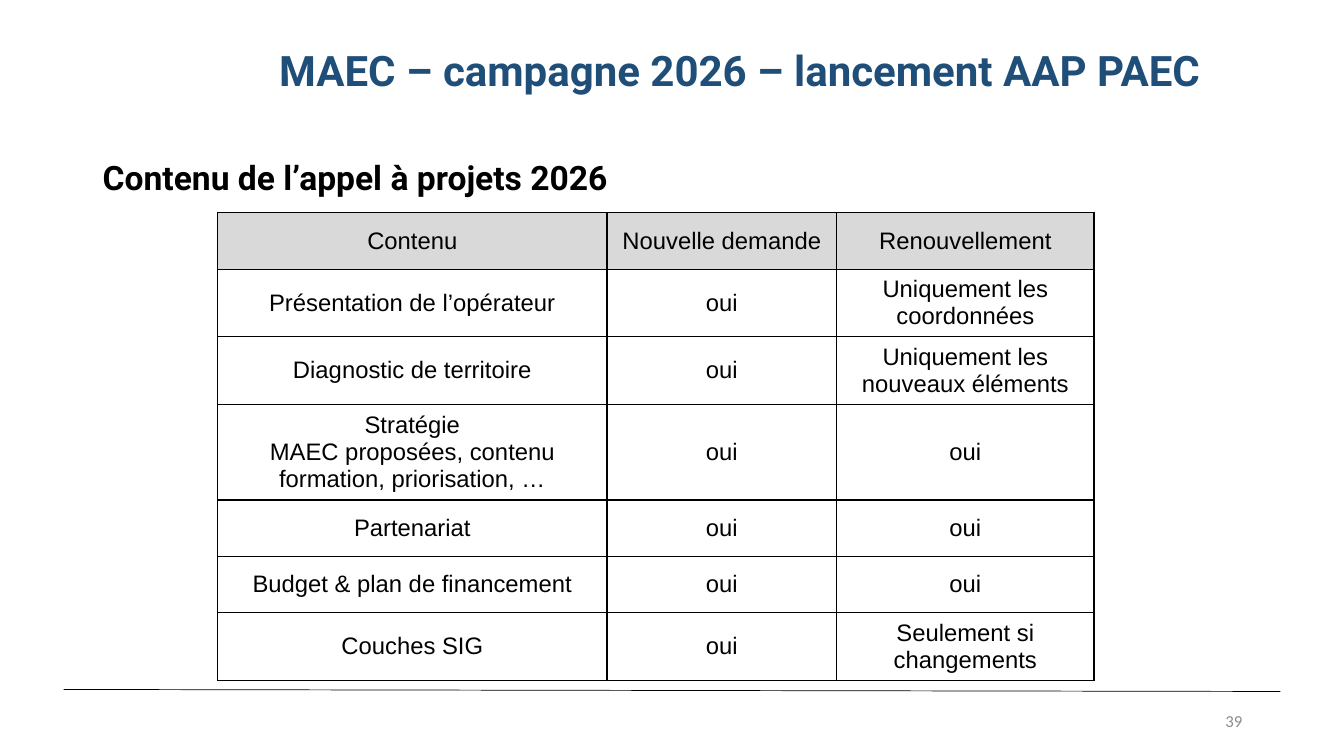
from dataclasses import dataclass

from lxml.etree import SubElement
from pptx import Presentation
from pptx.dml.color import RGBColor
from pptx.enum.shapes import MSO_CONNECTOR
from pptx.enum.text import MSO_ANCHOR as Anchor, PP_ALIGN as Align
from pptx.oxml.ns import qn
from pptx.util import Pt

PX = 9144


@dataclass(frozen=True)
class Theme:
    navy: str = "1F4E79"
    black: str = "000000"
    white: str = "FFFFFF"
    header: str = "D9D9D9"
    grey: str = "8C8C8C"
    heading_font: str = "Roboto"
    table_font: str = "Arial"
    number_font: str = "Calibri"
    title_size: int = 30
    subtitle_size: int = 24
    table_size: int = 17
    number_size: int = 12
    rule_width: float = 0.5
    border_width: float = 1


class SlideBuilder:
    def __init__(self, deck, theme):
        self.theme = theme
        self.slide = deck.slides.add_slide(deck.slide_layouts[6])

    def style(self, paragraph, font, size, color, bold=False, align=Align.LEFT):
        paragraph.alignment = align
        paragraph.font.name = font
        paragraph.font.size = Pt(size)
        paragraph.font.bold = bold
        paragraph.font.color.rgb = RGBColor.from_string(color)

    def rule(self, *ends):
        line = self.slide.shapes.add_connector(
            MSO_CONNECTOR.STRAIGHT, *(end * PX for end in ends))
        line.line.color.rgb = RGBColor.from_string(self.theme.black)
        line.line.width = Pt(self.theme.rule_width)
        SubElement(line._element.spPr, qn("a:effectLst"))

    def text(self, wording, box, *look, anchor=Anchor.TOP, spacing=1.0, **options):
        frame = self.slide.shapes.add_textbox(*(side * PX for side in box)).text_frame
        frame.word_wrap = True
        frame.vertical_anchor = anchor
        paragraph = frame.paragraphs[0]
        paragraph.text = wording
        paragraph.line_spacing = spacing
        self.style(paragraph, *look, **options)

    def border(self, cell):
        properties = cell._tc.get_or_add_tcPr()
        for index, side in enumerate(("lnL", "lnR", "lnT", "lnB")):
            edge = properties.makeelement(
                qn(f"a:{side}"), {"w": str(Pt(self.theme.border_width))})
            fill = SubElement(edge, qn("a:solidFill"))
            SubElement(fill, qn("a:srgbClr"), val=self.theme.black)
            properties.insert(index, edge)

    def table(self, rows, left, top, widths, heights):
        theme = self.theme
        grid = self.slide.shapes.add_table(
            len(rows), len(widths), left * PX, top * PX,
            sum(widths) * PX, sum(heights) * PX).table
        grid.first_row = grid.horz_banding = False
        for column, width in zip(grid.columns, widths):
            column.width = width * PX
        for r, (wordings, height) in enumerate(zip(rows, heights)):
            grid.rows[r].height = height * PX
            for c, wording in enumerate(wordings):
                cell = grid.cell(r, c)
                cell.text = wording
                cell.vertical_anchor = Anchor.MIDDLE
                cell.fill.solid()
                cell.fill.fore_color.rgb = RGBColor.from_string(
                    theme.white if r else theme.header)
                self.border(cell)
                for paragraph in cell.text_frame.paragraphs:
                    self.style(paragraph, theme.table_font, theme.table_size,
                               theme.black, align=Align.CENTER)


def main():
    deck = Presentation()
    deck.slide_width, deck.slide_height = 1333 * PX, 750 * PX
    theme = Theme()
    page = SlideBuilder(deck, theme)

    page.rule(63, 684, 1270, 686)
    page.text("MAEC – campagne 2026 – lancement AAP PAEC", (227, 21, 1014, 102),
              theme.heading_font, theme.title_size, theme.navy,
              bold=True, align=Align.CENTER, anchor=Anchor.MIDDLE, spacing=0.9)
    page.text("Contenu de l’appel à projets 2026", (92, 155, 1150, 50),
              theme.heading_font, theme.subtitle_size, theme.black,
              bold=True, spacing=0.9)
    page.text("39", (942, 695, 300, 40),
              theme.number_font, theme.number_size, theme.grey,
              align=Align.RIGHT, anchor=Anchor.MIDDLE)

    contents = [
        ("Contenu", "Nouvelle demande", "Renouvellement"),
        ("Présentation de l’opérateur", "oui", "Uniquement les coordonnées"),
        ("Diagnostic de territoire", "oui", "Uniquement les nouveaux éléments"),
        ("Stratégie\nMAEC proposées, contenu formation, priorisation, …", "oui", "oui"),
        ("Partenariat", "oui", "oui"),
        ("Budget & plan de financement", "oui", "oui"),
        ("Couches SIG", "oui", "Seulement si changements"),
    ]
    page.table(contents, 216, 211, (386, 228, 255), (56, 67, 67, 95, 56, 56, 67))

    deck.save("out.pptx")


if __name__ == "__main__":
    main()
